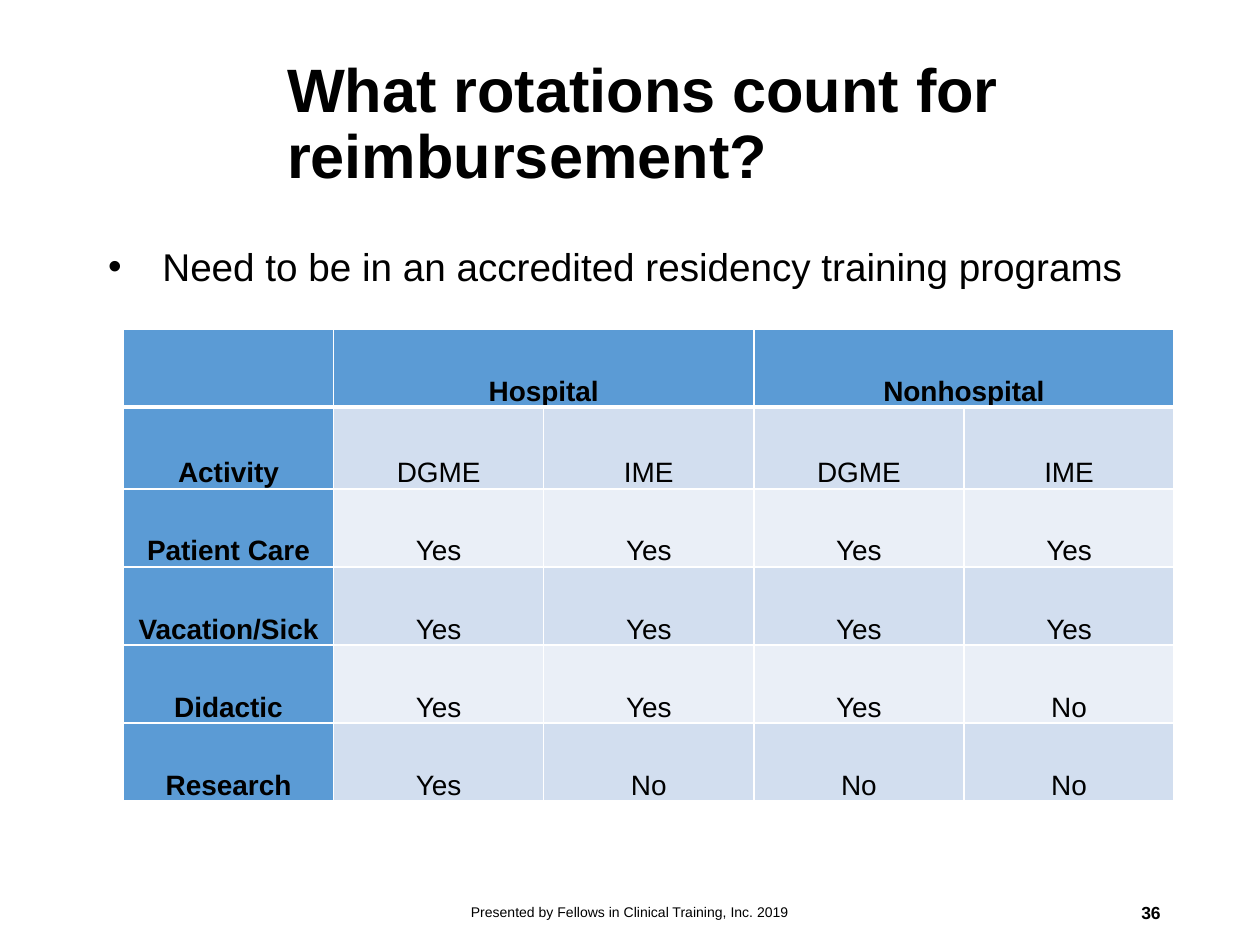
from lxml import etree
from pptx import Presentation
from pptx.dml.color import RGBColor
from pptx.enum.text import MSO_ANCHOR, PP_ALIGN
from pptx.oxml.ns import qn
from pptx.util import Inches, Pt

LEFT, CENTER, RIGHT = PP_ALIGN.LEFT, PP_ALIGN.CENTER, PP_ALIGN.RIGHT
TOP, MIDDLE, BOTTOM = MSO_ANCHOR.TOP, MSO_ANCHOR.MIDDLE, MSO_ANCHOR.BOTTOM

COLORS = {"text": "000000", "header": "5B9BD5", "odd": "D2DEEF",
          "even": "EAEFF7", "border": "FFFFFF"}
FONT = "Arial"

TITLE = "What rotations count for reimbursement?"
BULLET = "Need to be in an accredited residency training programs"
FOOTER = "Presented by Fellows in Clinical Training, Inc. 2019"
PAGE_NUMBER = "36"

ROTATIONS = [
    ["", "Hospital", "", "Nonhospital", ""],
    ["Activity", "DGME", "IME", "DGME", "IME"],
    ["Patient Care", "Yes", "Yes", "Yes", "Yes"],
    ["Vacation/Sick", "Yes", "Yes", "Yes", "Yes"],
    ["Didactic", "Yes", "Yes", "Yes", "No"],
    ["Research", "Yes", "No", "No", "No"],
]
TABLE_AT = (0.98, 2.61, 8.34, 3.76)
ROW_HEIGHTS = [0.62, 0.65, 0.62, 0.62, 0.62, 0.62]


def style(para, size, bold=False):
    font = para.font
    font.name, font.size, font.bold = FONT, Pt(size), bold
    font.color.rgb = RGBColor.from_string(COLORS["text"])


def set_indent(para, margin, indent):
    properties = para._p.get_or_add_pPr()
    properties.set("marL", str(Inches(margin)))
    properties.set("indent", str(Inches(indent)))
    return properties


def add_text(page, text, at, size, bold=False, align=LEFT, anchor=MIDDLE,
             inset=0.05, spacing=1.0, bullet=False):
    box = page.shapes.add_textbox(*map(Inches, at))
    frame = box.text_frame
    frame.word_wrap = True
    frame.vertical_anchor = anchor
    frame.margin_top = frame.margin_bottom = Inches(inset)
    frame.text = text
    para = frame.paragraphs[0]
    para.alignment, para.line_spacing = align, spacing
    if bullet:
        properties = set_indent(para, 0.5, -0.43)
        etree.SubElement(properties, qn("a:buFont"), typeface=FONT)
        etree.SubElement(properties, qn("a:buChar"), char="•")
    style(para, size, bold)


def set_borders(cell, bottom):
    properties = cell._tc.get_or_add_tcPr()
    sides = [("lnL", 1), ("lnR", 1), ("lnT", 1), ("lnB", bottom)]
    for position, (side, width) in enumerate(sides):
        line = etree.Element(qn(f"a:{side}"), w=str(Pt(width)))
        fill = etree.SubElement(line, qn("a:solidFill"))
        etree.SubElement(fill, qn("a:srgbClr"), val=COLORS["border"])
        properties.insert(position, line)


def add_rotation_table(page):
    columns = len(ROTATIONS[0])
    table = page.shapes.add_table(len(ROTATIONS), columns,
                                  *map(Inches, TABLE_AT)).table
    for column in table.columns:
        column.width = Inches(TABLE_AT[2] / columns)
    for r, (row, height) in enumerate(zip(ROTATIONS, ROW_HEIGHTS)):
        table.rows[r].height = Inches(height)
        for c, text in enumerate(row):
            cell = table.cell(r, c)
            heading = r == 0 or c == 0
            band = "header" if heading else "odd" if r % 2 else "even"
            cell.fill.solid()
            cell.fill.fore_color.rgb = RGBColor.from_string(COLORS[band])
            set_borders(cell, 3 if r == 0 else 1)
            cell.vertical_anchor = BOTTOM
            cell.margin_left = cell.margin_right = Inches(0.07)
            cell.margin_top = cell.margin_bottom = 0
            cell.text_frame.text = text
            para = cell.text_frame.paragraphs[0]
            para.alignment, para.line_spacing = CENTER, 1.12
            para.space_after = Pt(0.2)
            set_indent(para, 0.01, -0.01)
            style(para, 16, heading)
    for c in (1, 3):
        table.cell(0, c).merge(table.cell(0, c + 1))


def main():
    deck = Presentation()
    deck.slide_width, deck.slide_height = Inches(10), Inches(7.5)
    page = deck.slides.add_slide(deck.slide_layouts[6])
    add_text(page, TITLE, (2.18, 0.27, 7.14, 1.45), 35, bold=True,
             inset=0.1, spacing=0.9)
    add_text(page, BULLET, (0.69, 1.9, 8.62, 0.71), 22.1, anchor=TOP,
             inset=0.1, spacing=0.8, bullet=True)
    add_rotation_table(page)
    add_text(page, FOOTER, (3.31, 7.04, 3.38, 0.4), 8, align=CENTER)
    add_text(page, PAGE_NUMBER, (7.06, 7.04, 2.25, 0.4), 10, bold=True,
             align=RIGHT)
    deck.save("out.pptx")


if __name__ == "__main__":
    main()
